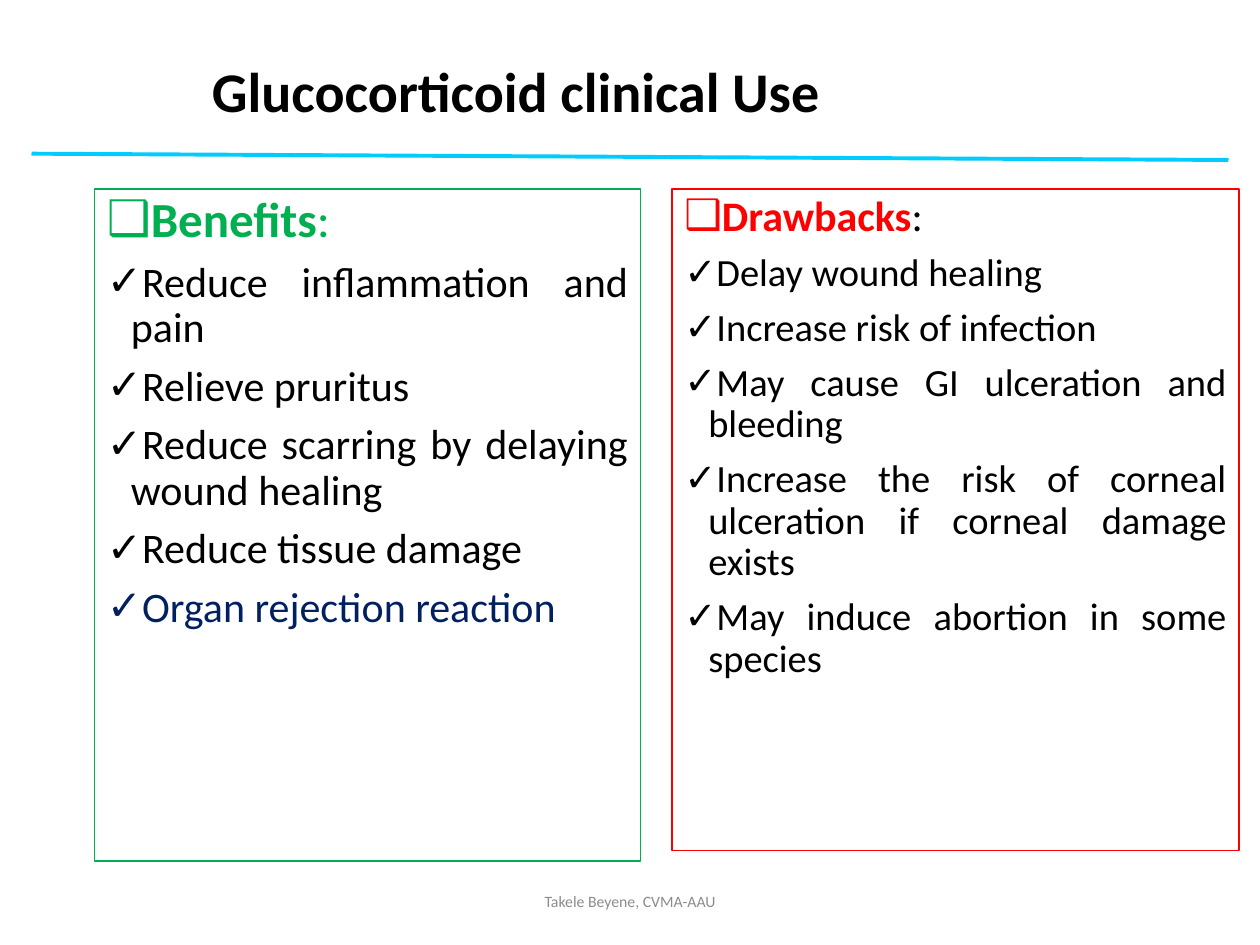
from dataclasses import dataclass

from lxml.etree import SubElement
from pptx import Presentation
from pptx.dml.color import RGBColor
from pptx.enum.shapes import MSO_CONNECTOR, MSO_SHAPE
from pptx.enum.text import MSO_ANCHOR, PP_ALIGN
from pptx.oxml.ns import qn
from pptx.util import Inches, Pt


@dataclass(frozen=True)
class Theme:
    font: str = "Calibri"
    black: str = "000000"
    green: str = "00B050"
    red: str = "FF0000"
    navy: str = "002060"
    cyan: str = "00CCFF"
    gray: str = "8C8C8C"
    title_size: int = 32
    footer_size: int = 9
    border: float = 0.75
    rule: float = 2.25
    indent: float = 0.19
    line_spacing: float = 0.9
    space_before: float = 7.5


class SlideBuilder:
    """Draws on one slide; lengths are cells of a 120 by 90 grid."""

    COLUMNS, ROWS = 120, 90

    def __init__(self, presentation, theme):
        self.theme = theme
        self.slide = presentation.slides.add_slide(presentation.slide_layouts[6])
        self.width, self.height = presentation.slide_width, presentation.slide_height

    def cells(self, *lengths):
        """Turn alternating columns and rows into slide units."""
        units = (self.width / self.COLUMNS, self.height / self.ROWS)
        return [round(length * units[i % 2]) for i, length in enumerate(lengths)]

    def set_font(self, font, size, color, bold=False):
        font.name, font.size, font.bold = self.theme.font, Pt(size), bold
        font.color.rgb = RGBColor.from_string(color)

    def text(self, box, words, size, color, bold=False, align=PP_ALIGN.LEFT):
        frame = self.slide.shapes.add_textbox(*self.cells(*box)).text_frame
        frame.word_wrap = True
        frame.vertical_anchor = MSO_ANCHOR.MIDDLE
        paragraph = frame.paragraphs[0]
        paragraph.text, paragraph.alignment = words, align
        self.set_font(paragraph.font, size, color, bold)
        return paragraph

    def line(self, start, end, color):
        connector = self.slide.shapes.add_connector(
            MSO_CONNECTOR.STRAIGHT, *self.cells(*start, *end))
        connector.line.color.rgb = RGBColor.from_string(color)
        connector.line.width = Pt(self.theme.rule)
        SubElement(connector._element.spPr, qn("a:effectLst"))

    def bullet(self, paragraph, symbol, align):
        """Give the paragraph a hanging bullet and the list spacing."""
        paragraph.alignment = align
        paragraph.line_spacing = self.theme.line_spacing
        paragraph.space_before = Pt(self.theme.space_before)
        properties = paragraph._p.get_or_add_pPr()
        indent = Inches(self.theme.indent)
        properties.set("marL", str(indent))
        properties.set("indent", str(-indent))
        SubElement(properties, qn("a:buFont"), typeface="Arial")
        SubElement(properties, qn("a:buChar"), char=symbol)

    def panel(self, box, heading, color, colon_color, heading_size, items, item_size):
        """Outlined box with a heading and (text, colour) check items."""
        shape = self.slide.shapes.add_shape(MSO_SHAPE.RECTANGLE, *self.cells(*box))
        shape.shadow.inherit = False
        shape.fill.background()
        shape.line.color.rgb = RGBColor.from_string(color)
        shape.line.width = Pt(self.theme.border)
        frame = shape.text_frame
        frame.word_wrap = True
        frame.vertical_anchor = MSO_ANCHOR.TOP

        paragraph = frame.paragraphs[0]
        self.bullet(paragraph, "❑", PP_ALIGN.LEFT)
        for words, run_color, bold in ((heading, color, True), (":", colon_color, False)):
            run = paragraph.add_run()
            run.text = words
            self.set_font(run.font, heading_size, run_color, bold)

        for words, item_color in items:
            paragraph = frame.add_paragraph()
            paragraph.text = words
            self.bullet(paragraph, "✓", PP_ALIGN.JUSTIFY)
            self.set_font(paragraph.font, item_size, item_color)


def main():
    theme = Theme()
    presentation = Presentation()
    presentation.slide_width, presentation.slide_height = Inches(10), Inches(7.5)
    builder = SlideBuilder(presentation, theme)

    title = builder.text((19, 3, 98, 12), "Glucocorticoid clinical Use",
                         theme.title_size, theme.black, bold=True)
    title.line_spacing = theme.line_spacing

    benefits = [
        ("Reduce inflammation and pain", theme.black),
        ("Relieve pruritus", theme.black),
        ("Reduce scarring by delaying wound healing", theme.black),
        ("Reduce tissue damage", theme.black),
        ("Organ rejection reaction", theme.navy),
    ]
    drawbacks = [(words, theme.black) for words in (
        "Delay wound healing",
        "Increase risk of infection",
        "May cause GI ulceration and bleeding",
        "Increase the risk of corneal ulceration if corneal damage exists",
        "May induce abortion in some species",
    )]
    builder.panel((9, 18, 52, 64), "Benefits", theme.green, theme.green, 28, benefits, 24)
    builder.panel((64, 18, 54, 63), "Drawbacks", theme.red, theme.black, 24, drawbacks, 22)

    builder.text((39.75, 83.4, 40.5, 4.8), "Takele Beyene, CVMA-AAU",
                 theme.footer_size, theme.gray, align=PP_ALIGN.CENTER)
    builder.line((3, 14.64), (117, 15.24), theme.cyan)
    presentation.save("out.pptx")


if __name__ == "__main__":
    main()
